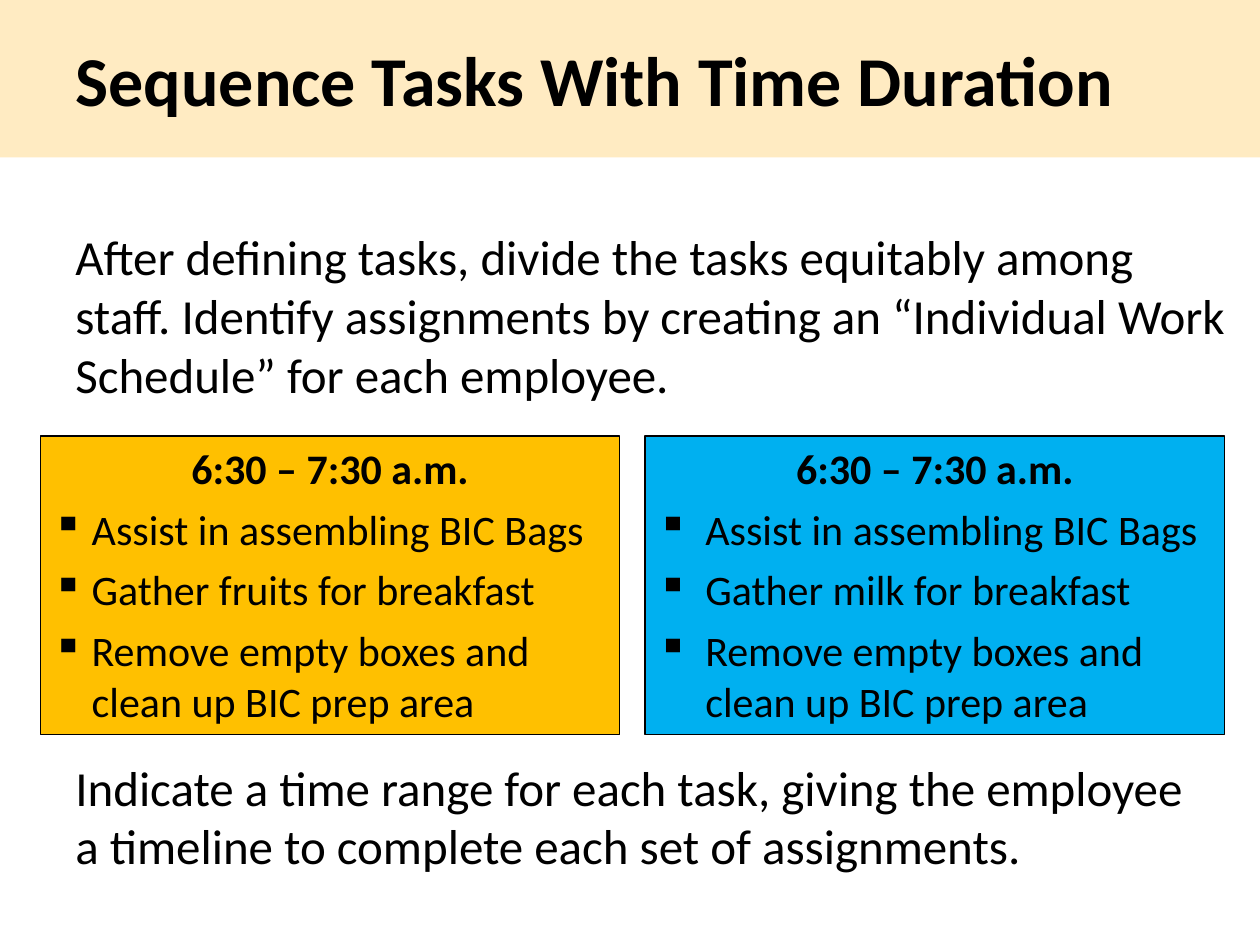
from dataclasses import dataclass

from lxml.etree import SubElement
from pptx import Presentation
from pptx.dml.color import RGBColor
from pptx.enum.shapes import MSO_SHAPE
from pptx.enum.text import MSO_ANCHOR, PP_ALIGN
from pptx.oxml.ns import qn
from pptx.util import Inches, Pt


@dataclass(frozen=True)
class Theme:
    font: str = "Calibri"
    ink: RGBColor = RGBColor.from_string("000000")
    band: RGBColor = RGBColor.from_string("FFEBC2")
    gold: RGBColor = RGBColor.from_string("FFC000")
    blue: RGBColor = RGBColor.from_string("00B0F0")
    title_size: int = 40
    body_size: int = 28
    schedule_size: int = 24


theme = Theme()


def write(paragraph, text, size, bold=False, align=PP_ALIGN.LEFT, after=0, hang=None):
    """Fill a paragraph; hang is the bullet indent in inches."""
    paragraph.text = text
    paragraph.alignment = align
    paragraph.space_before = Pt(0)
    paragraph.space_after = Pt(after)
    if hang:
        properties = paragraph._p.get_or_add_pPr()
        properties.set("marL", str(Inches(hang)))
        properties.set("indent", str(-Inches(hang)))
        SubElement(properties, qn("a:buChar")).set("char", "▪")
    font = paragraph.runs[0].font
    font.name, font.size, font.bold = theme.font, Pt(size), bold
    font.color.rgb = theme.ink


deck = Presentation()
deck.slide_width, deck.slide_height = Inches(10), Inches(7.5)
slide = deck.slides.add_slide(deck.slide_layouts[5])

# Title band
title = slide.shapes.title
title.left, title.top = Inches(0), Inches(0)
title.width, title.height = Inches(10), Inches(1.25)
title.fill.solid()
title.fill.fore_color.rgb = theme.band
title.text_frame.margin_left = Inches(0.6)
title.text_frame.vertical_anchor = MSO_ANCHOR.MIDDLE
write(title.text_frame.paragraphs[0], "Sequence Tasks With Time Duration",
      theme.title_size, bold=True)

# Guidance above and below the schedules
guidance = [
    (1.75, 9.33, 1.51, "After defining tasks, divide the tasks equitably among staff. "
     "Identify assignments by creating an “Individual Work Schedule” for each employee."),
    (5.96, 9.17, 1.04, "Indicate a time range for each task, giving the employee "
     "a timeline to complete each set of assignments."),
]
for top, width, height, text in guidance:
    advice = slide.shapes.add_textbox(Inches(0.5), Inches(top), Inches(width), Inches(height))
    advice.text_frame.word_wrap = True
    write(advice.text_frame.paragraphs[0], text, theme.body_size)

# One work schedule per employee
schedules = [
    (0.32, theme.gold, 0.31, "fruits"),
    (5.12, theme.blue, 0.38, "milk"),
]
for left, color, hang, food in schedules:
    schedule = slide.shapes.add_shape(MSO_SHAPE.RECTANGLE, Inches(left), Inches(3.46),
                                      Inches(4.6), Inches(2.37))
    schedule.shadow.inherit = False
    schedule.fill.solid()
    schedule.fill.fore_color.rgb = color
    schedule.line.color.rgb = theme.ink
    schedule.line.width = Pt(0.75)
    frame = schedule.text_frame
    frame.word_wrap = True
    frame.vertical_anchor = MSO_ANCHOR.TOP
    write(frame.paragraphs[0], "6:30 – 7:30 a.m.", theme.schedule_size,
          bold=True, align=PP_ALIGN.CENTER, after=6)
    for task in ("Assist in assembling BIC Bags", f"Gather {food} for breakfast",
                 "Remove empty boxes and clean up BIC prep area"):
        write(frame.add_paragraph(), task, theme.schedule_size, after=6, hang=hang)

deck.save("out.pptx")
